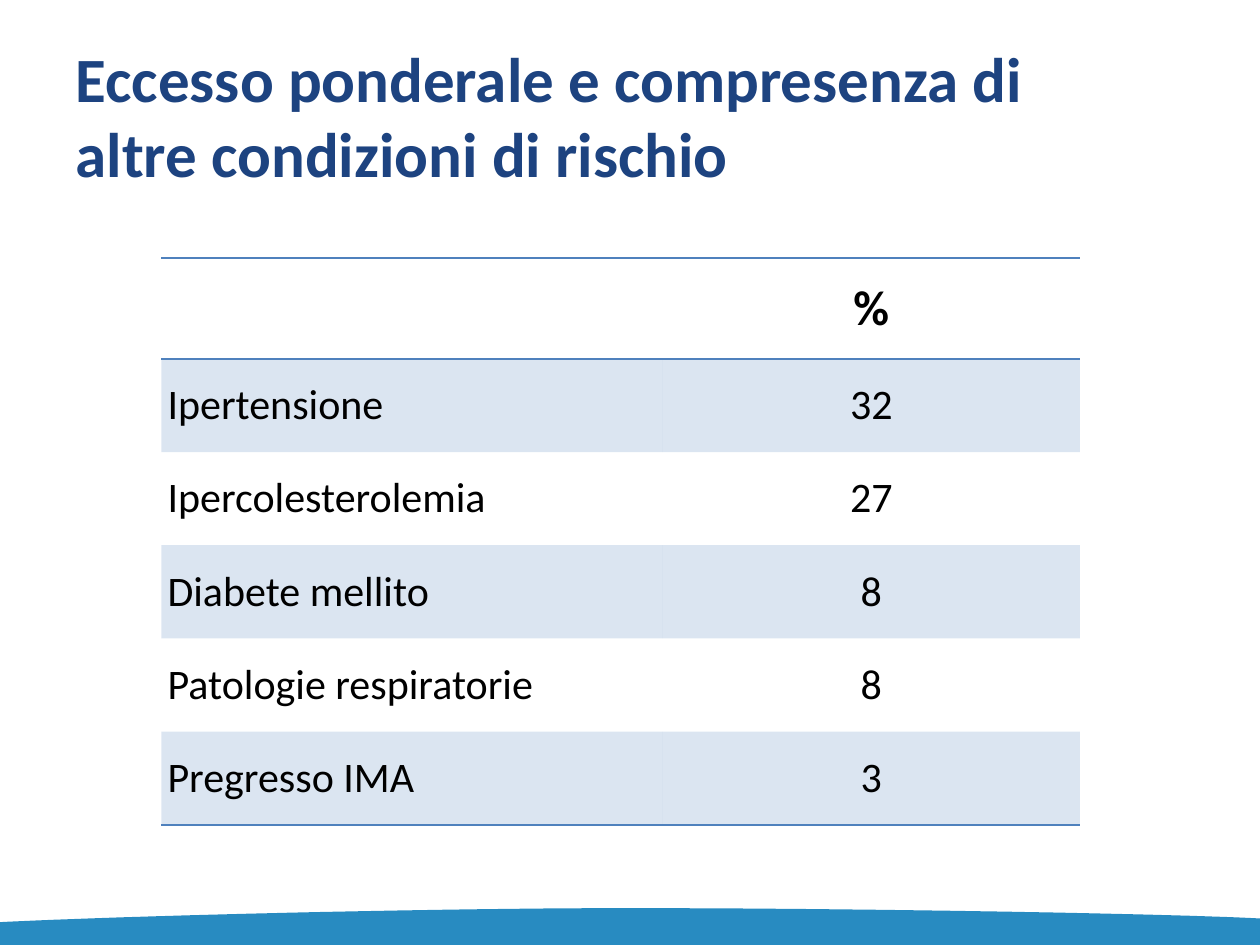
from dataclasses import dataclass

import lxml.etree
import pptx
import pptx.dml.color
import pptx.enum.text
import pptx.oxml.ns
import pptx.util

Inches = pptx.util.Inches
Pt = pptx.util.Pt
RGB = pptx.dml.color.RGBColor
Align = pptx.enum.text.PP_ALIGN
Anchor = pptx.enum.text.MSO_ANCHOR
qn = pptx.oxml.ns.qn


@dataclass(frozen=True)
class Theme:
    """Colours, font and type sizes of the slide."""
    font: str = "Calibri"
    title: str = "1D4380"
    wave: str = "288BC1"
    accent: str = "4F81BD"
    text: str = "000000"
    band_alpha: int = 20
    title_size: int = 36
    header_size: int = 28
    body_size: int = 24
    rule_width: int = 1


THEME = Theme()
SLIDE_WIDTH, SLIDE_HEIGHT = 10, 7.5
NO_STYLE_NO_GRID = "{2D5ABB26-0587-4C30-8999-92F81FD0307C}"
HEADING = "Eccesso ponderale e compresenza di altre condizioni di rischio"
CONDITIONS = [
    ("", "%"),
    ("Ipertensione", "32"),
    ("Ipercolesterolemia", "27"),
    ("Diabete mellito", "8"),
    ("Patologie respiratorie", "8"),
    ("Pregresso IMA", "3"),
]


def style_runs(paragraph, size, colour, bold):
    """Format every run of a paragraph."""
    for run in paragraph.runs:
        run.font.name = THEME.font
        run.font.size = Pt(size)
        run.font.bold = bold
        run.font.color.rgb = RGB.from_string(colour)


def add_heading(slide, left, top, width, height):
    """Place the slide title in its placeholder."""
    heading = slide.shapes.title
    heading.left, heading.top = Inches(left), Inches(top)
    heading.width, heading.height = Inches(width), Inches(height)
    frame = heading.text_frame
    frame.text = HEADING
    frame.word_wrap = True
    frame.auto_size = pptx.enum.text.MSO_AUTO_SIZE.NONE
    frame.vertical_anchor = Anchor.MIDDLE
    frame.paragraphs[0].alignment = Align.LEFT
    style_runs(frame.paragraphs[0], THEME.title_size, THEME.title, True)


def curve_points(start, first, second, end, steps=40):
    """Return points along a cubic curve."""
    def blend(t, a, b, c, d):
        """Return one coordinate of the curve at t."""
        u = 1 - t
        return u**3 * a + 3 * u * u * t * b + 3 * u * t * t * c + t**3 * d

    return [tuple(blend(i / steps, *axis) for axis in zip(start, first, second, end))
            for i in range(steps + 1)]


def add_wave(slide, left, top, width, height):
    """Draw the curved band along the foot of the slide."""
    rising = curve_points((0, 0.38), (0.1, 0.21), (0.34, 0), (0.5, 0))
    falling = curve_points((0.5, 0), (0.67, 0), (0.92, 0.14), (1, 0.28))
    outline = [(Inches(left + x * width), Inches(top + y * height))
               for x, y in rising + falling[1:] + [(1, 1), (0, 1)]]
    builder = slide.shapes.build_freeform(*outline[0])
    builder.add_line_segments(outline[1:], close=True)
    wave = builder.convert_to_shape()
    wave.shadow.inherit = False
    wave.fill.solid()
    wave.fill.fore_color.rgb = RGB.from_string(THEME.wave)
    wave.line.fill.background()


def add_rule(cell, side):
    """Draw an accent border on the given side of a cell."""
    border = lxml.etree.Element(qn(f"a:{side}"), w=str(Pt(THEME.rule_width)))
    fill = lxml.etree.SubElement(border, qn("a:solidFill"))
    lxml.etree.SubElement(fill, qn("a:srgbClr"), val=THEME.accent)
    cell._tc.get_or_add_tcPr().insert(0, border)


def fill_band(cell, shaded):
    """Give a cell a translucent accent fill, or none."""
    if not shaded:
        cell.fill.background()
        return
    cell.fill.solid()
    cell.fill.fore_color.rgb = RGB.from_string(THEME.accent)
    colour = cell._tc.tcPr.find(".//" + qn("a:srgbClr"))
    lxml.etree.SubElement(colour, qn("a:alpha"), val=str(THEME.band_alpha * 1000))


def add_conditions(slide, left, top, width, height, header_height=0.8, label_share=0.546):
    """Place the table of risk conditions and their percentages."""
    last = len(CONDITIONS) - 1
    table = slide.shapes.add_table(len(CONDITIONS), 2, Inches(left), Inches(top),
                                   Inches(width), Inches(height)).table
    table._tbl.tblPr.find(qn("a:tableStyleId")).text = NO_STYLE_NO_GRID
    for column, share in zip(table.columns, (label_share, 1 - label_share)):
        column.width = Inches(width * share)
    for row_index, values in enumerate(CONDITIONS):
        header = row_index == 0
        table.rows[row_index].height = Inches(
            header_height if header else (height - header_height) / last)
        for column_index, value in enumerate(values):
            cell = table.cell(row_index, column_index)
            cell.margin_left = cell.margin_right = Inches(0.05)
            cell.margin_top = cell.margin_bottom = 0
            cell.vertical_anchor = Anchor.MIDDLE
            fill_band(cell, row_index % 2 == 1)
            if header or row_index == last:
                add_rule(cell, "lnB")
            if header:
                add_rule(cell, "lnT")
            paragraph = cell.text_frame.paragraphs[0]
            paragraph.text = value
            paragraph.alignment = Align.CENTER if column_index else Align.LEFT
            style_runs(paragraph, THEME.header_size if header else THEME.body_size,
                       THEME.text, header)


def main():
    """Build the slide and save it."""
    deck = pptx.Presentation()
    deck.slide_width, deck.slide_height = Inches(SLIDE_WIDTH), Inches(SLIDE_HEIGHT)
    slide = deck.slides.add_slide(deck.slide_layouts.get_by_name("Title Only"))
    wave_top = 0.961 * SLIDE_HEIGHT
    add_wave(slide, 0, wave_top, SLIDE_WIDTH, SLIDE_HEIGHT - wave_top)
    add_conditions(slide, 0.128 * SLIDE_WIDTH, 0.273 * SLIDE_HEIGHT,
                   0.729 * SLIDE_WIDTH, 0.6 * SLIDE_HEIGHT)
    add_heading(slide, 0.05 * SLIDE_WIDTH, 0.045 * SLIDE_HEIGHT,
                0.8 * SLIDE_WIDTH, 0.153 * SLIDE_HEIGHT)
    deck.save("out.pptx")


if __name__ == "__main__":
    main()
